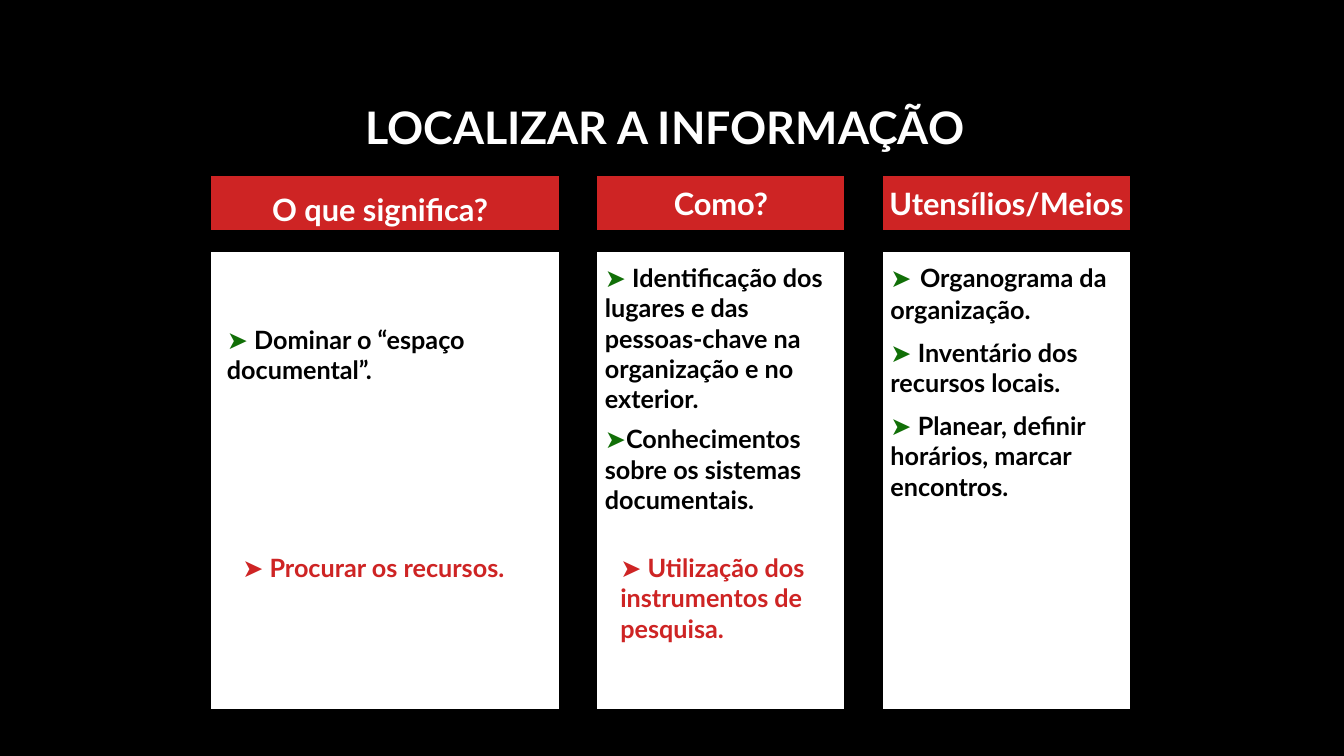
from pptx import Presentation
from pptx.dml.color import RGBColor
from pptx.enum.shapes import MSO_SHAPE as Preset
from pptx.enum.text import MSO_ANCHOR as Anchor, PP_ALIGN as Align
from pptx.util import Pt

BLACK = RGBColor(0x00, 0x00, 0x00)
WHITE = RGBColor(0xFF, 0xFF, 0xFF)
RED = RGBColor(0xCE, 0x24, 0x24)
GREEN = RGBColor(0x11, 0x6F, 0x07)

HEADER_TOP, HEADER_HEIGHT = 124, 42
PANEL_TOP, PANEL_HEIGHT = 178, 330
COLUMN_LEFT, COLUMN_GAP = 149, 24
ITEM_SIZE, HEADING_SIZE, TITLE_SIZE = 18, 22, 32


class Board:
    """Holds the slide, the group being filled and the text style."""

    font = "Lato"

    def __init__(self, slide):
        self.slide = slide
        self.shapes = slide.shapes
        fill = slide.background.fill
        fill.solid()
        fill.fore_color.rgb = BLACK

    def start_group(self):
        self.shapes = self.slide.shapes.add_group_shape().shapes

    def end_group(self):
        self.shapes = self.slide.shapes

    def block(self, left, top, width, height, color):
        block = self.shapes.add_shape(
            Preset.RECTANGLE, Pt(left), Pt(top), Pt(width), Pt(height))
        block.shadow.inherit = False
        block.fill.solid()
        block.fill.fore_color.rgb = color
        block.line.color.rgb = BLACK
        block.line.width = Pt(3.5)
        return block

    def text_box(self, left, top, width, height):
        frame = self.shapes.add_textbox(
            Pt(left), Pt(top), Pt(width), Pt(height)).text_frame
        frame.word_wrap = True
        return frame

    def run(self, paragraph, text, color, size=ITEM_SIZE, font=font, bold=True):
        run = paragraph.add_run()
        run.text = text
        run.font.name = font
        run.font.size = Pt(size)
        run.font.bold = bold
        run.font.color.rgb = color

    def heading(self, frame, text, size=HEADING_SIZE):
        paragraph = frame.paragraphs[0]
        paragraph.alignment = Align.CENTER
        self.run(paragraph, text, WHITE, size)
        return paragraph

    def items(self, frame, items, gap):
        for index, runs in enumerate(items):
            paragraph = frame.add_paragraph() if index else frame.paragraphs[0]
            paragraph.space_before = Pt(gap if index else 0)
            for run in runs:
                self.run(paragraph, *run)


deck = Presentation()
deck.slide_width, deck.slide_height = Pt(960), Pt(540)
board = Board(deck.slides.add_slide(deck.slide_layouts[6]))

# Title
title = board.text_box(0, 48, 950, 66)
title.vertical_anchor = Anchor.BOTTOM
board.heading(title, "LOCALIZAR A INFORMAÇÃO", TITLE_SIZE).line_spacing = 0.9

# Columns: width, heading, items box (left offset, top, width, height),
# space above the first item, gap between items, items
columns = [
    (252, "O que significa?", (6, 194, 240, 160), 37.8, 0, [
        [("➤", GREEN), (" Dominar o “espaço documental”.", BLACK)],
    ]),
    (180, "Como?", (0, 184, 180, 189), 3.6, 7.2, [
        [("➤ ", GREEN),
         ("Identificação dos lugares e das pessoas-chave na organização "
          "e no exterior.", BLACK)],
        [("➤", GREEN),
         ("Conhecimentos sobre os sistemas documentais.", BLACK)],
    ]),
    (180, "Utensílios/Meios", (0, 178, 180, 187), 3.6, 9, [
        [("➤", GREEN), (" ", BLACK, 24, "Times New Roman", False),
         ("Organograma da organização.", BLACK)],
        [("➤ ", GREEN), ("Inventário dos recursos locais.", BLACK)],
        [("➤ ", GREEN),
         ("Planear, definir horários, marcar encontros.", BLACK)],
    ]),
]

left = COLUMN_LEFT
for number, (width, heading, box, inset, gap, items) in enumerate(columns):
    board.start_group()
    board.block(left, PANEL_TOP, width, PANEL_HEIGHT, WHITE)
    header = board.block(left, HEADER_TOP, width, HEADER_HEIGHT, RED)
    if number == 0:
        # The first heading sits lower than its bar
        heading_frame = board.text_box(left + 6, 133, 233, 34)
    else:
        heading_frame = header.text_frame
        heading_frame.vertical_anchor = Anchor.MIDDLE
        heading_frame.word_wrap = False
    board.heading(heading_frame, heading)

    offset, top, box_width, box_height = box
    item_frame = board.text_box(left + offset, top, box_width, box_height)
    item_frame.margin_top = Pt(inset)
    board.items(item_frame, items, gap)
    left += width + COLUMN_GAP
board.end_group()

# Highlighted items
highlights = [
    (166, 234, 29, "➤ Procurar os recursos."),
    (436, 174, 72, "➤ Utilização dos instrumentos de pesquisa."),
]
for left, width, height, text in highlights:
    board.items(board.text_box(left, 391, width, height), [[(text, RED)]], 0)

deck.save("out.pptx")
